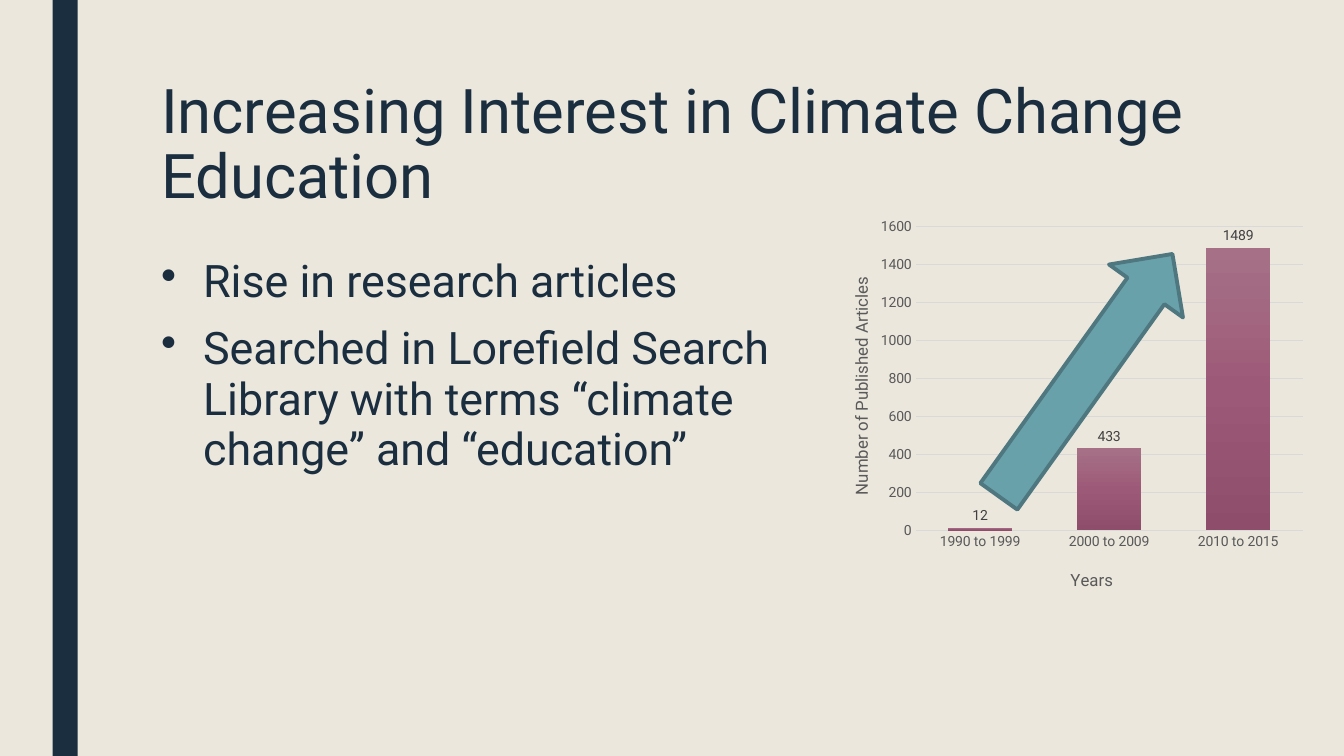
from copy import deepcopy

from lxml import etree
from pptx import Presentation
from pptx.chart.data import CategoryChartData
from pptx.dml.color import RGBColor
from pptx.enum.chart import XL_CHART_TYPE as ChartType
from pptx.enum.chart import XL_LABEL_POSITION as LabelPosition
from pptx.enum.chart import XL_TICK_MARK as TickMark
from pptx.enum.shapes import MSO_SHAPE as Preset
from pptx.oxml.ns import qn
from pptx.util import Pt

FONT = "Roboto"
COLORS = {
    "paper": "EBE7DD",
    "navy": "1A2E40",
    "axis_text": "595959",
    "label_text": "404040",
    "grid": "D9D9D9",
    "bar_top": "A67187",
    "bar_middle": "9D5A78",
    "bar_bottom": "8E4D6A",
    "arrow": "69A1AB",
    "arrow_edge": "4E777F",
}


def color(name):
    return RGBColor.from_string(COLORS[name])


def style_font(font, size, tone):
    font.name, font.size, font.bold = FONT, Pt(size), False
    font.color.rgb = color(tone)


def add_text(frame, text, size=32, tone="navy", line=1.0, before=0, after=0,
             indent=0, bullet=None):
    """Write one paragraph, reusing the empty one of a new frame."""
    para = frame.paragraphs[0]
    if para.runs:
        para = frame.add_paragraph()
    para.line_spacing = line
    para.space_before, para.space_after = Pt(before), Pt(after)
    if bullet:
        props = para._p.get_or_add_pPr()
        props.set("marL", str(Pt(indent)))
        props.set("indent", str(-Pt(indent)))
        etree.SubElement(props, qn("a:buChar")).set("char", bullet)
    span = para.add_run()
    span.text = text
    style_font(span.font, size, tone)


def add_frame(page, left, top, width, height):
    box = page.shapes.add_textbox(Pt(left), Pt(top), Pt(width), Pt(height))
    box.text_frame.word_wrap = True
    return box.text_frame


def add_block(page, preset, left, top, width, height, fill):
    block = page.shapes.add_shape(preset, Pt(left), Pt(top), Pt(width), Pt(height))
    block.shadow.inherit = False
    block.fill.solid()
    block.fill.fore_color.rgb = color(fill)
    block.line.fill.background()
    return block


def add_side_band(page, left, width, height):
    add_block(page, Preset.RECTANGLE, left, 0, width, height, "navy")


def add_title(page, left, top, width, height):
    frame = add_frame(page, left, top, width, height)
    add_text(frame, "Increasing Interest in Climate Change Education",
             size=44, line=0.89)


def add_points(page, left, top, width, height):
    frame = add_frame(page, left, top, width, height)
    for point in (
        "Rise in research articles",
        "Searched in Lorefield Search Library with terms “climate change” and “education”",
    ):
        add_text(frame, point, line=0.94, before=10, after=2, indent=30, bullet="•")


def set_layout(parent, after, **places):
    """Give a chart part a fixed place, in fractions of the chart."""
    for old in parent.findall(qn("c:layout")):
        parent.remove(old)
    layout = etree.Element(qn("c:layout"))
    manual = etree.SubElement(layout, qn("c:manualLayout"))
    for tag, value in places.items():
        etree.SubElement(manual, qn(f"c:{tag}")).set("val", str(value))
    if after is None:
        parent.insert(0, layout)
    else:
        after.addnext(layout)


def style_axis(axis, title, x, y):
    axis.major_tick_mark = axis.minor_tick_mark = TickMark.NONE
    style_font(axis.tick_labels.font, 10, "axis_text")
    add_text(axis.axis_title.text_frame, title, size=12, tone="axis_text")
    element = axis.axis_title._element
    set_layout(element, element.find(qn("c:tx")),
               xMode="edge", yMode="edge", x=x, y=y)


def fill_bars(series):
    fill = series.format.fill
    fill.gradient()
    fill.gradient_angle = 270
    stops = series._element.find(".//" + qn("a:gsLst"))
    stops.append(deepcopy(stops[0]))
    tones = ("bar_top", "bar_middle", "bar_bottom")
    for index, (stop, tone) in enumerate(zip(fill.gradient_stops, tones)):
        stop.position = index / 2
        stop.color.rgb = color(tone)


def add_article_chart(page, left, top, width, height):
    data = CategoryChartData()
    data.categories = ["1990 to 1999", "2000 to 2009", "2010 to 2015"]
    data.add_series("Series 1", (12, 433, 1489))
    chart = page.shapes.add_chart(ChartType.COLUMN_CLUSTERED, Pt(left), Pt(top),
                                  Pt(width), Pt(height), data).chart
    chart.has_legend = chart.has_title = False
    style_font(chart.font, 10, "axis_text")

    years, counts = chart.category_axis, chart.value_axis
    style_axis(years, "Years", x=0.5, y=0.9)
    style_axis(counts, "Number of Published Articles", x=0.05, y=0.16)
    years.format.line.color.rgb = color("grid")
    years.format.line.width = Pt(1)
    counts.format.line.fill.background()
    counts.minimum_scale, counts.maximum_scale, counts.major_unit = 0, 1600, 200
    grid = counts.major_gridlines.format.line
    grid.color.rgb, grid.width = color("grid"), Pt(0.75)

    plot = chart.plots[0]
    plot.gap_width, plot.overlap, plot.vary_by_categories = 100, -24, False
    fill_bars(plot.series[0])
    labels = plot.series[0].data_labels
    labels.show_value, labels.position = True, LabelPosition.OUTSIDE_END
    style_font(labels.font, 10, "label_text")
    area = chart._chartSpace.find(".//" + qn("c:plotArea"))
    set_layout(area, None, layoutTarget="inner", xMode="edge", yMode="edge",
               x=0.19, y=0.04, w=0.79, h=0.77)


def add_rising_arrow(page, left, top, width, height):
    arrow = add_block(page, Preset.RIGHT_ARROW, left, top, width, height, "arrow")
    arrow.rotation = 305.6
    arrow.line.color.rgb = color("arrow_edge")
    arrow.line.width = Pt(2.75)


def main():
    deck = Presentation()
    deck.slide_width, deck.slide_height = Pt(960), Pt(540)
    page = deck.slides.add_slide(deck.slide_layouts[6])
    page.background.fill.solid()
    page.background.fill.fore_color.rgb = color("paper")
    add_side_band(page, 37.5, 18, 540)
    add_title(page, 108, 54, 756, 117)
    add_points(page, 108, 180, 459, 282)
    add_article_chart(page, 587.5, 150.5, 350, 282)
    add_rising_arrow(page, 669, 235.5, 213, 65)
    deck.save("out.pptx")


if __name__ == "__main__":
    main()
